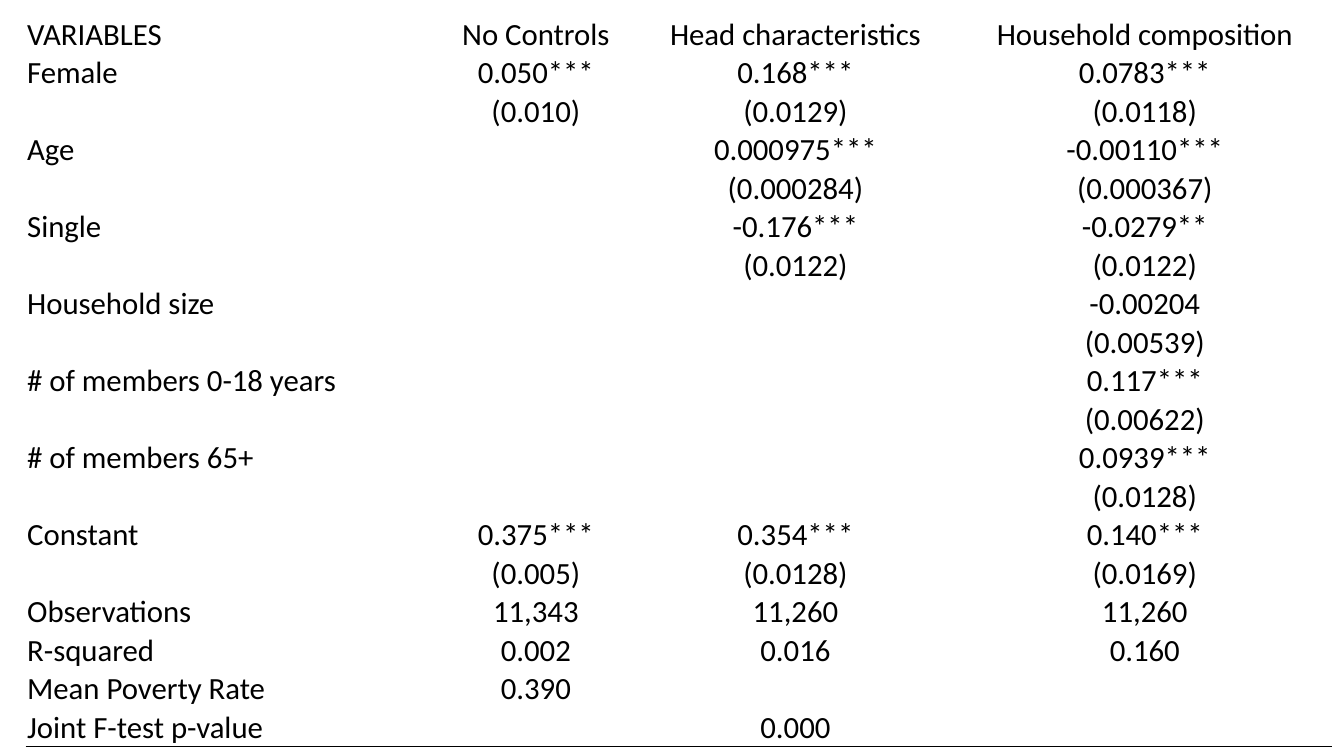
from lxml import etree
from pptx import Presentation
from pptx.dml.color import RGBColor
from pptx.enum.text import MSO_ANCHOR, PP_ALIGN
from pptx.oxml.ns import qn
from pptx.util import Inches, Pt

LEFT, MID = PP_ALIGN.LEFT, PP_ALIGN.CENTER
BASE = MSO_ANCHOR.BOTTOM
INK = {"text": "000000", "rule": "000000"}
WIDTHS = [4.09, 1.93, 3.22, 3.71]
ROW = 0.36
INSET = Inches(0.01)

ROWS = [
    ("VARIABLES", "No Controls", "Head characteristics", "Household composition"),
    ("Female", "0.050***", "0.168***", "0.0783***"),
    ("", "(0.010)", "(0.0129)", "(0.0118)"),
    ("Age", "", "0.000975***", "-0.00110***"),
    ("", "", "(0.000284)", "(0.000367)"),
    ("Single", "", "-0.176***", "-0.0279**"),
    ("", "", "(0.0122)", "(0.0122)"),
    ("Household size", "", "", "-0.00204"),
    ("", "", "", "(0.00539)"),
    ("# of members 0-18 years", "", "", "0.117***"),
    ("", "", "", "(0.00622)"),
    ("# of members 65+", "", "", "0.0939***"),
    ("", "", "", "(0.0128)"),
    ("Constant", "0.375***", "0.354***", "0.140***"),
    ("", "(0.005)", "(0.0128)", "(0.0169)"),
    ("Observations", "11,343", "11,260", "11,260"),
    ("R-squared", "0.002", "0.016", "0.160"),
    ("Mean Poverty Rate", "0.390", "", ""),
    ("Joint F-test p-value", "", "0.000", ""),
]


def write(cell, text, align=LEFT, size=22, face="Calibri", ink="text"):
    par = cell.text_frame.paragraphs[0]
    par.alignment = align
    run = par.add_run()
    run.text = text
    run.font.size = Pt(size)
    run.font.name = face
    run.font.color.rgb = RGBColor.from_string(INK[ink])


def underline(cell, width=0.5):
    line = etree.Element(qn("a:lnB"), w=str(Pt(width)))
    fill = etree.SubElement(line, qn("a:solidFill"))
    etree.SubElement(fill, qn("a:srgbClr"), val=INK["rule"])
    cell._tc.get_or_add_tcPr().insert(0, line)


# Slide
deck = Presentation()
deck.slide_width, deck.slide_height = Inches(13.33), Inches(7.5)
slide = deck.slides.add_slide(deck.slide_layouts[6])

# Regression table
table = slide.shapes.add_table(
    len(ROWS), len(WIDTHS), Inches(0.26), Inches(0.15),
    Inches(sum(WIDTHS)), Inches(ROW * len(ROWS))).table
table.first_row = table.horz_banding = False
for col, width in zip(table.columns, WIDTHS):
    col.width = Inches(width)

# Cells
for r, texts in enumerate(ROWS):
    table.rows[r].height = Inches(ROW)
    for c, text in enumerate(texts):
        cell = table.cell(r, c)
        cell.fill.background()
        cell.vertical_anchor = BASE
        cell.margin_left = cell.margin_right = cell.margin_top = INSET
        cell.margin_bottom = 0
        if text:
            write(cell, text, align=MID if c else LEFT)

# Closing rule under the last row
for cell in table.rows[len(ROWS) - 1].cells:
    underline(cell)

deck.save("out.pptx")
